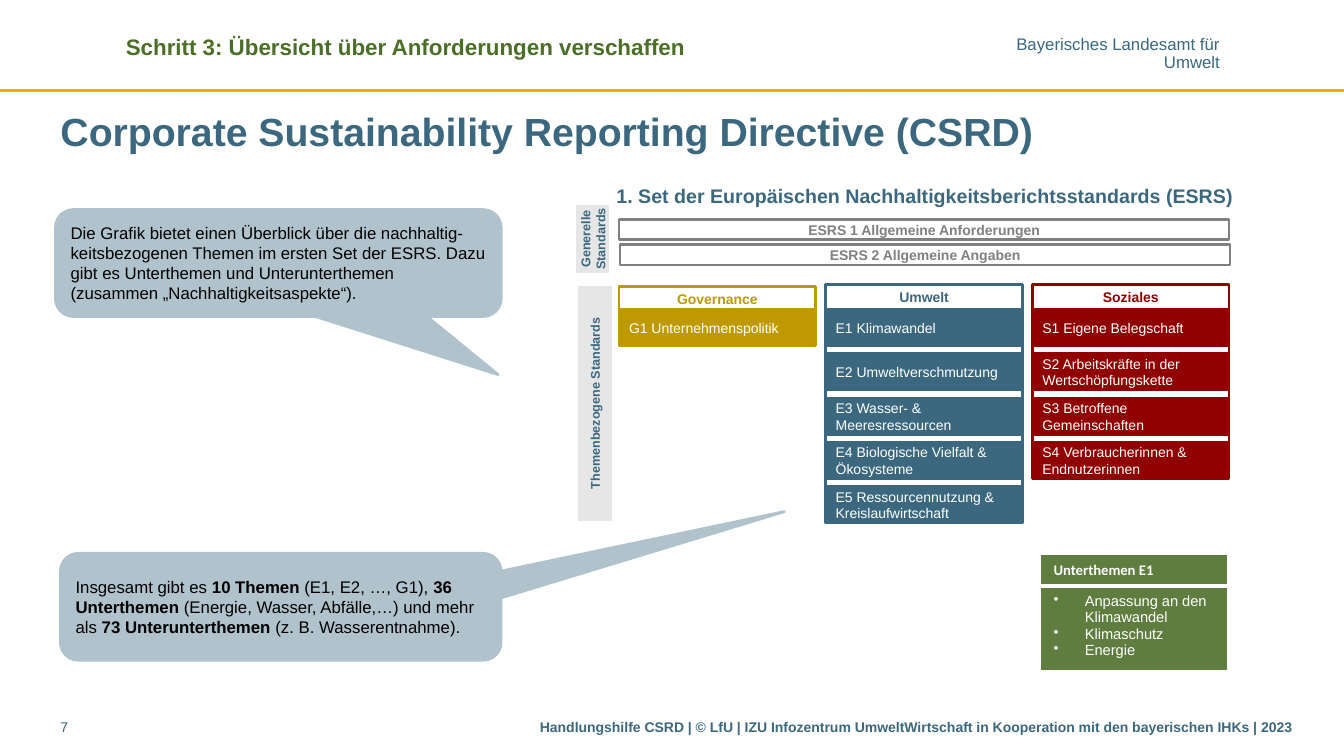
from lxml import etree
from pptx import Presentation
from pptx import util as u
from pptx.dml.color import RGBColor
from pptx.enum import shapes, text
from pptx.oxml.ns import qn

Inches = u.Inches
COLORS = {
    "blue": "3B687F", "red": "900000", "gold": "BF9900", "rule": "F9AA00",
    "green": "4B6E28", "table": "5E7D3F", "callout": "B0C2CB", "tab": "E6E6E6",
    "gray": "808080", "white": "FFFFFF", "black": "000000",
}
LEFT, CENTER, RIGHT = text.PP_ALIGN.LEFT, text.PP_ALIGN.CENTER, text.PP_ALIGN.RIGHT
MIDDLE, TOP = text.MSO_ANCHOR.MIDDLE, text.MSO_ANCHOR.TOP
RECTANGLE = shapes.MSO_SHAPE.RECTANGLE
CALLOUT = shapes.MSO_SHAPE.ROUNDED_RECTANGULAR_CALLOUT


def write(frame, paragraphs, size, color, bold=False, align=LEFT, anchor=TOP,
          insets=(0.1, 0.05, 0.1, 0.05)):
    """Fill a text frame; a paragraph is a string or a list of (text, bold) runs."""
    frame.word_wrap = True
    frame.vertical_anchor = anchor
    (frame.margin_left, frame.margin_top,
     frame.margin_right, frame.margin_bottom) = map(Inches, insets)
    for number, runs in enumerate(paragraphs):
        paragraph = frame.paragraphs[0] if number == 0 else frame.add_paragraph()
        paragraph.alignment = align
        for words, run_bold in [(runs, bold)] if isinstance(runs, str) else runs:
            run = paragraph.add_run()
            run.text = words
            run.font.name = "Arial"
            run.font.size = u.Pt(size)
            run.font.bold = run_bold
            run.font.color.rgb = RGBColor.from_string(COLORS[color])


def add_box(box, fill, line, kind=RECTANGLE):
    """Add a shape at (left, top, width, height); fill None leaves it open."""
    shape = slide.shapes.add_shape(kind, *map(Inches, box))
    shape.shadow.inherit = False
    if fill:
        shape.fill.solid()
        shape.fill.fore_color.rgb = RGBColor.from_string(COLORS[fill])
    else:
        shape.fill.background()
    shape.line.color.rgb = RGBColor.from_string(COLORS[line])
    shape.line.width = u.Pt(2)
    return shape


presentation = Presentation()
presentation.slide_width = Inches(13.33)
presentation.slide_height = Inches(7.5)
slide = presentation.slides.add_slide(presentation.slide_layouts[5])

# Header, title and footer
rule = slide.shapes.add_connector(shapes.MSO_CONNECTOR.STRAIGHT, 0, Inches(0.9),
                                  presentation.slide_width, Inches(0.9))
rule.line.color.rgb = RGBColor.from_string(COLORS["rule"])
rule.line.width = u.Pt(2)
etree.SubElement(rule._element.spPr, qn("a:effectLst"))

title = slide.shapes.title
title.left, title.top, title.width, title.height = map(Inches, (0.6, 1.02, 12.31, 0.55))
write(title.text_frame, ["Corporate Sustainability Reporting Directive (CSRD)"],
      28, "blue", True, anchor=MIDDLE, insets=(0, 0.05, 0, 0.05))

agency = slide.shapes.add_textbox(*map(Inches, (10.07, 0.37, 2.03, 0.34))).text_frame
write(agency, ["Bayerisches Landesamt für", "Umwelt"], 12, "blue", align=RIGHT,
      insets=(0, 0, 0, 0))
agency.word_wrap = False
for paragraph in agency.paragraphs:
    paragraph.line_spacing = 0.85

step = slide.shapes.add_textbox(*map(Inches, (1.15, 0.28, 6.14, 0.37)))
write(step.text_frame, ["Schritt 3: Übersicht über Anforderungen verschaffen"],
      16, "green", True)
page_number = slide.shapes.add_textbox(*map(Inches, (0.6, 7.08, 0.7, 0.31)))
write(page_number.text_frame, ["7"], 10, "blue", insets=(0, 0.05, 0, 0.05))
footer = slide.shapes.add_textbox(*map(Inches, (5.17, 7.08, 7.74, 0.31)))
write(footer.text_frame,
      ["Handlungshilfe CSRD | © LfU | IZU Infozentrum UmweltWirtschaft "
       "in Kooperation mit den bayerischen IHKs | 2023"],
      10, "blue", True, RIGHT)

# General standards
heading = add_box((6.01, 1.76, 6.33, 0.36), None, "white")
write(heading.text_frame,
      ["1. Set der Europäischen Nachhaltigkeitsberichtsstandards (ESRS)"],
      14, "blue", True, CENTER, MIDDLE)
for left, top, label in [(6.14, 2.18, "ESRS 1 Allgemeine Anforderungen"),
                         (6.15, 2.43, "ESRS 2 Allgemeine Angaben")]:
    bar = add_box((left, top, 6.05, 0.2), "white", "gray")
    write(bar.text_frame, [label], 10, "gray", True, CENTER, MIDDLE)

# Topical standards: one framed column per area
columns = [
    ("Governance", "gold", 6.14, 2.84, 0.58, ["G1 Unternehmenspolitik"]),
    ("Umwelt", "blue", 8.19, 2.82, 2.34,
     ["E1 Klimawandel", "E2 Umweltverschmutzung", "E3 Wasser- & Meeresressourcen",
      "E4 Biologische Vielfalt & Ökosysteme",
      "E5 Ressourcennutzung & Kreislaufwirtschaft"]),
    ("Soziales", "red", 10.24, 2.82, 1.9,
     ["S1 Eigene Belegschaft", "S2 Arbeitskräfte in der Wertschöpfungskette",
      "S3 Betroffene Gemeinschaften", "S4 Verbraucherinnen & Endnutzerinnen"]),
]
for area, color, left, top, height, standards in columns:
    for row, standard in enumerate(standards):
        box = add_box((left, 3.07 + 0.44 * row, 1.95, 0.36), color, color)
        write(box.text_frame, [standard], 10, "white", anchor=MIDDLE)
    area_frame = add_box((left, top, 1.95, height), None, color)
    write(area_frame.text_frame, [area], 10, color, True, CENTER,
          insets=(0.1, 0.04, 0.1, 0.05))

# Row labels, turned to read upwards
for box, label, side in [((5.53, 2.19, 0.7, 0.36), "Generelle Standards", 0.04),
                         ((4.72, 3.82, 2.36, 0.36), "Themenbezogene Standards", 0.1)]:
    tab = add_box(box, "tab", "white")
    tab.rotation = 270
    write(tab.text_frame, [label], 9, "blue", True, CENTER, MIDDLE,
          (side, 0.05, side, 0.05))

# Callouts
callouts = [
    ((0.55, 2.08, 4.42, 1.06), (0.493, 1.044, 0.167),
     [("Die Grafik bietet einen Überblick über die nachhaltig-keitsbezogenen Themen "
       "im ersten Set der ESRS. Dazu gibt es Unterthemen und Unterunterthemen "
       "(zusammen „Nachhaltigkeitsaspekte“).", False)]),
    ((0.6, 5.49, 4.37, 1.06), (1.143, -0.891, 0.167),
     [("Insgesamt gibt es ", False), ("10 Themen ", True), ("(E1, E2, …, G1), ", False),
      ("36 Unterthemen ", True), ("(Energie, Wasser, Abfälle,…) und mehr als ", False),
      ("73 Unterunterthemen ", True), ("(z. B. Wasserentnahme).", False)]),
]
for box, adjustments, runs in callouts:
    callout = add_box(box, "callout", "callout", CALLOUT)
    for index, value in enumerate(adjustments):
        callout.adjustments[index] = value
    write(callout.text_frame, [runs], 12, "black", anchor=MIDDLE)

# Subtopics table
table = slide.shapes.add_table(2, 1, *map(Inches, (10.32, 5.5, 1.86, 1.04))).table
table.horz_banding = False
subtopics = [
    (0.29, ["Unterthemen E1"], True, {"lnL": 1, "lnR": 1, "lnT": 1, "lnB": 3}),
    (0.75, ["Anpassung an den Klimawandel", "Klimaschutz", "Energie"], False,
     {"lnL": 1, "lnR": 1, "lnT": 3, "lnB": 1}),
]
for row, (height, lines, is_header, borders) in enumerate(subtopics):
    table.rows[row].height = Inches(height)
    cell = table.cell(row, 0)
    write(cell.text_frame, lines, 10.5, "white", is_header)
    cell.margin_left = cell.margin_right = Inches(0.13)
    cell.margin_top = cell.margin_bottom = Inches(0.07)
    properties = cell._tc.get_or_add_tcPr()
    for side, points in borders.items():
        border = etree.SubElement(properties, qn("a:" + side), w=str(u.Pt(points)))
        border_fill = etree.SubElement(border, qn("a:solidFill"))
        etree.SubElement(border_fill, qn("a:srgbClr"), val=COLORS["white"])
    cell.fill.solid()
    cell.fill.fore_color.rgb = RGBColor.from_string(COLORS["table"])
    for paragraph in cell.text_frame.paragraphs:
        if is_header:
            paragraph.runs[0].font.name = "Calibri"
        else:
            indents = paragraph._p.get_or_add_pPr()
            indents.set("marL", str(Inches(0.31)))
            indents.set("indent", str(Inches(-0.31)))
            etree.SubElement(indents, qn("a:buChar"), char="•")

presentation.save("out.pptx")
